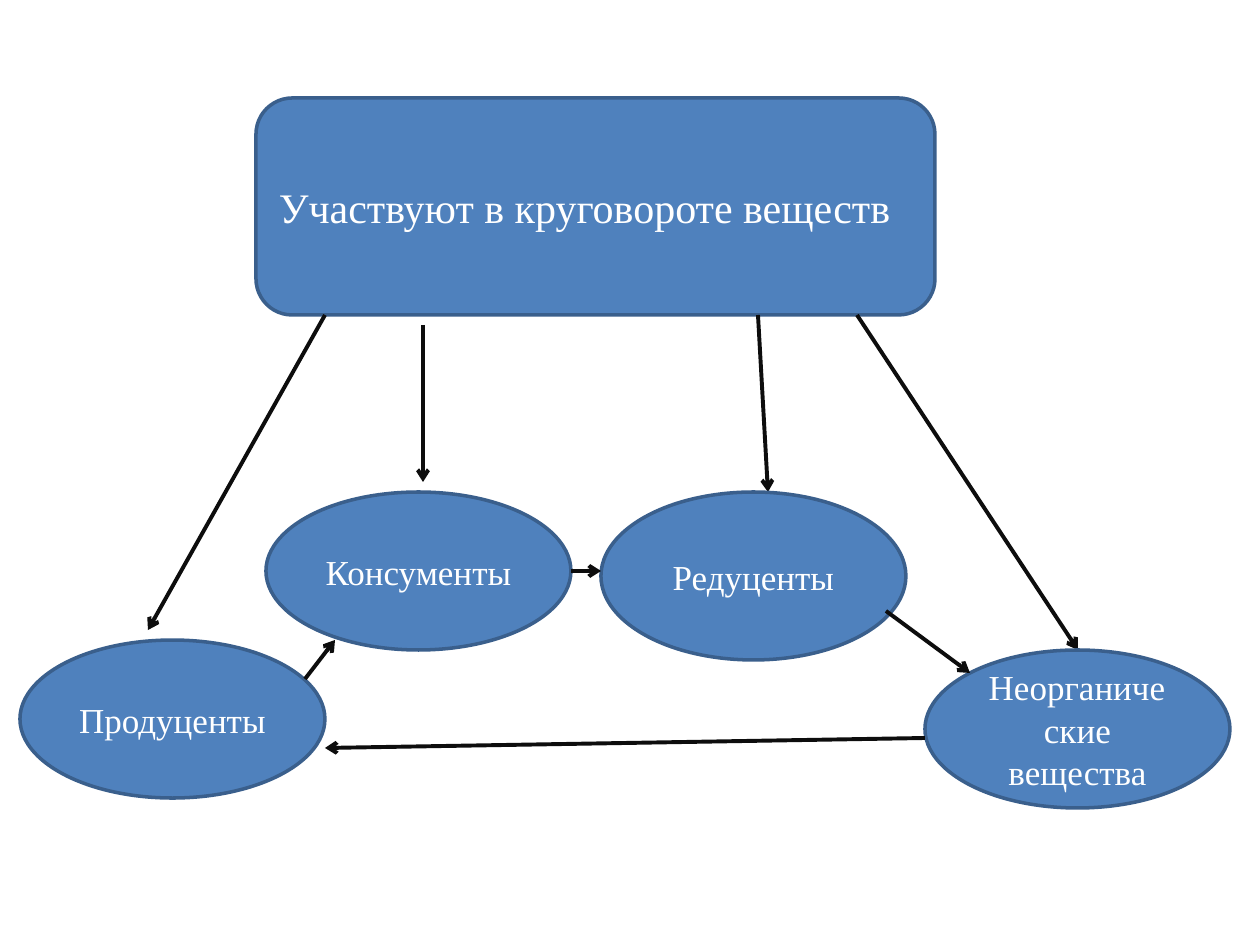
from lxml.etree import SubElement
from pptx import Presentation
from pptx.dml.color import RGBColor
from pptx.enum.shapes import MSO_CONNECTOR, MSO_SHAPE
from pptx.enum.text import MSO_ANCHOR, PP_ALIGN
from pptx.oxml.ns import qn
from pptx.util import Pt

PX_PER_INCH = 126


def px(length):
    return round(length * 914400 / PX_PER_INCH)


def color(hex_string):
    return RGBColor.from_string(hex_string)


class Diagram:
    font = "Times New Roman"
    fill = "4F81BD"
    outline = "3A5F8C"
    text = "FFFFFF"
    arrow_line = "0D0D0D"

    def __init__(self, page):
        self.page = page

    def node(self, kind, words, left, top, width, height, size, align):
        box = self.page.shapes.add_shape(
            kind, px(left), px(top), px(width), px(height))
        box.shadow.inherit = False
        box.fill.solid()
        box.fill.fore_color.rgb = color(self.fill)
        box.line.color.rgb = color(self.outline)
        box.line.width = Pt(2)
        frame = box.text_frame
        frame.word_wrap = True
        frame.vertical_anchor = MSO_ANCHOR.MIDDLE
        para = frame.paragraphs[0]
        para.alignment = align
        span = para.add_run()
        span.text = words
        span.font.name = self.font
        span.font.size = Pt(size)
        span.font.color.rgb = color(self.text)

    def title(self, words, left, top, width, height):
        self.node(MSO_SHAPE.ROUNDED_RECTANGLE, words, left, top, width, height,
                  24, PP_ALIGN.LEFT)

    def oval(self, words, left, top, width, height):
        self.node(MSO_SHAPE.OVAL, words, left, top, width, height,
                  20, PP_ALIGN.CENTER)

    def arrow(self, x1, y1, x2, y2):
        link = self.page.shapes.add_connector(
            MSO_CONNECTOR.STRAIGHT, px(x1), px(y1), px(x2), px(y2))
        link.line.color.rgb = color(self.arrow_line)
        link.line.width = Pt(2.25)
        SubElement(link.line._get_or_add_ln(), qn("a:tailEnd"), type="arrow")
        SubElement(link._element.spPr, qn("a:effectLst"))


def main():
    deck = Presentation()
    deck.slide_width = px(1260)
    deck.slide_height = px(945)
    diagram = Diagram(deck.slides.add_slide(deck.slide_layouts[6]))

    # Heading
    diagram.title("Участвуют в круговороте веществ", 256, 98, 679, 217)

    # Arrows from the heading to the participants
    for ends in [(325, 315, 148, 630), (423, 325, 423, 482),
                 (758, 315, 768, 492), (857, 315, 1078, 650)]:
        diagram.arrow(*ends)

    # Participants
    for words, left, top, height in [
            ("Продуценты", 20, 640, 158),
            ("Консументы", 266, 492, 158),
            ("Редуценты", 601, 492, 168),
            ("Неорганические вещества", 925, 650, 158)]:
        diagram.oval(words, left, top, 305, height)

    # Cycle between the participants
    for ends in [(305, 679, 335, 640), (571, 571, 601, 571),
                 (886, 611, 970, 673), (925, 738, 325, 748)]:
        diagram.arrow(*ends)

    deck.save("out.pptx")


if __name__ == "__main__":
    main()
